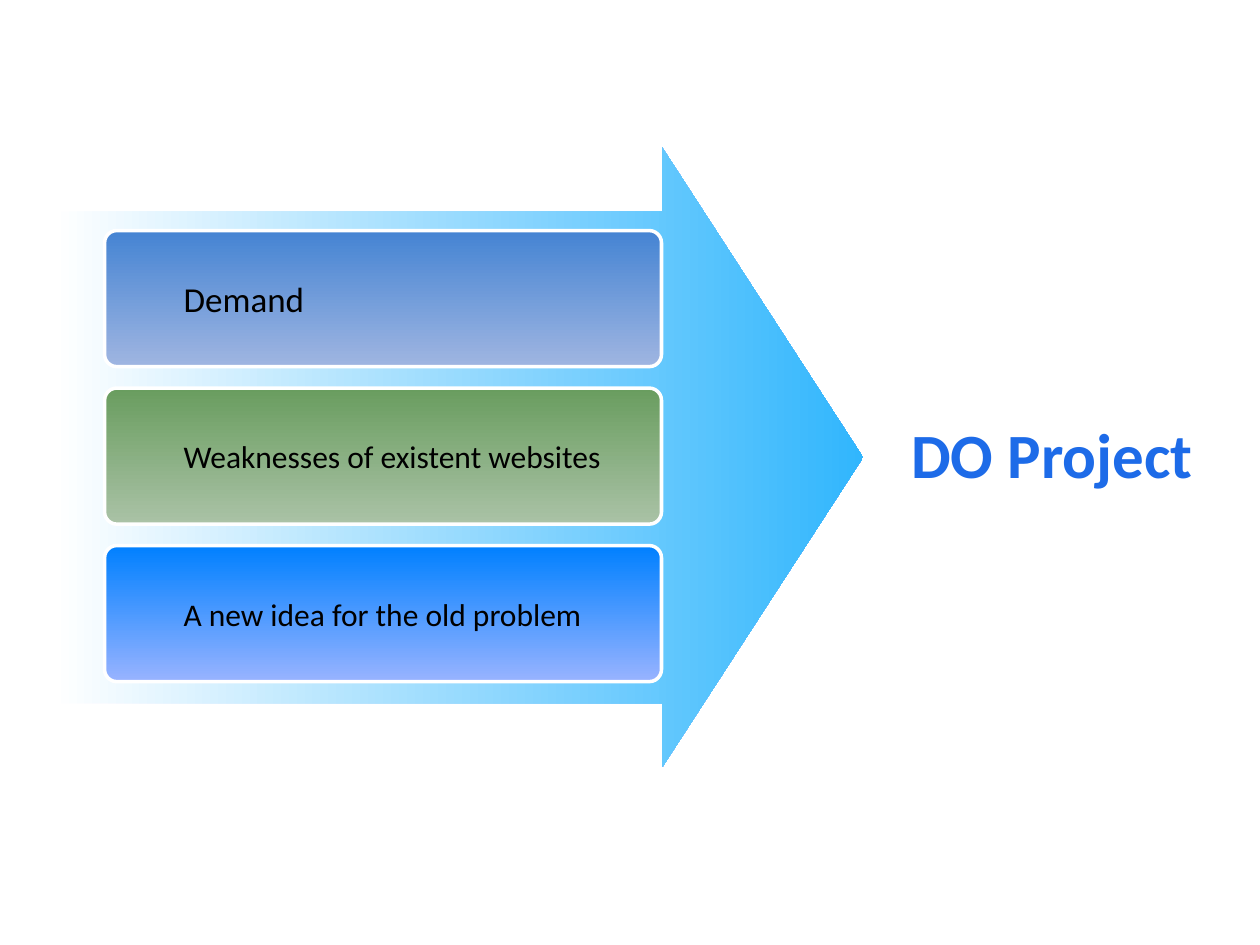
from typing import NamedTuple

from pptx import Presentation
from pptx.dml.color import RGBColor
from pptx.enum.shapes import MSO_SHAPE
from pptx.enum.text import MSO_ANCHOR, PP_ALIGN
from pptx.util import Inches, Pt

ARROW = MSO_SHAPE.RIGHT_ARROW
ROUNDED = MSO_SHAPE.ROUNDED_RECTANGLE
MIDDLE = MSO_ANCHOR.MIDDLE
LEFT, CENTER = PP_ALIGN.LEFT, PP_ALIGN.CENTER

WHITE = RGBColor(0xFF, 0xFF, 0xFF)
BLACK = RGBColor(0x00, 0x00, 0x00)
SKY = RGBColor(0x31, 0xB6, 0xFD)
TITLE_BLUE = RGBColor(0x1D, 0x6B, 0xE8)
BLUE, PALE_BLUE = RGBColor(0x45, 0x84, 0xD3), RGBColor(0x9F, 0xB5, 0xE1)
GREEN, PALE_GREEN = RGBColor(0x69, 0x9D, 0x5F), RGBColor(0xAA, 0xC2, 0xA6)
AZURE, PALE_AZURE = RGBColor(0x00, 0x80, 0xFF), RGBColor(0x98, 0xB3, 0xFF)

RIGHTWARD, DOWNWARD = 0, 270
CARD_LEFT, CARD_TOP, CARD_STEP = 0.83, 1.83, 1.25
CARD_WIDTH, CARD_HEIGHT = 4.42, 1.08


class Card(NamedTuple):
    text: str
    size: int
    top_color: RGBColor
    bottom_color: RGBColor


CARDS = [
    Card("Demand", 20, BLUE, PALE_BLUE),
    Card("Weaknesses of existent websites", 18, GREEN, PALE_GREEN),
    Card("A new idea for the old problem", 18, AZURE, PALE_AZURE),
]


def add_gradient_shape(slide, kind, box: tuple, adjustments: tuple,
                       colors: tuple, angle: int):
    sp = slide.shapes.add_shape(kind, *map(Inches, box))
    sp.shadow.inherit = False
    for i, value in enumerate(adjustments):
        sp.adjustments[i] = value
    sp.fill.gradient()
    sp.fill.gradient_angle = angle
    for stop, color, position in zip(sp.fill.gradient_stops, colors, (0, 1)):
        stop.color.rgb = color
        stop.position = position
    return sp


def write_text(p, text: str, color: RGBColor, **font_format) -> None:
    r = p.add_run()
    r.text = text
    r.font.color.rgb = color
    for name, value in {"name": "Calibri", **font_format}.items():
        setattr(r.font, name, value)


def add_card(slide, card: Card, row: int) -> None:
    box = (CARD_LEFT, CARD_TOP + row * CARD_STEP, CARD_WIDTH, CARD_HEIGHT)
    sp = add_gradient_shape(slide, ROUNDED, box, (0.09,),
                            (card.top_color, card.bottom_color), DOWNWARD)
    sp.line.color.rgb = WHITE
    sp.line.width = Pt(2)
    tf = sp.text_frame
    tf.word_wrap = True
    tf.vertical_anchor = MIDDLE
    p = tf.paragraphs[0]
    p.alignment = LEFT
    p.level = 1
    pPr = p._p.get_or_add_pPr()
    pPr.set("marL", str(Inches(0.5)))
    pPr.set("indent", "0")
    write_text(p, card.text, BLACK, size=Pt(card.size))


def add_result(slide) -> None:
    box = (7.08, 3.25, 2.54, 0.71)
    tf = slide.shapes.add_textbox(*map(Inches, box)).text_frame
    tf.word_wrap = False
    p = tf.paragraphs[0]
    p.alignment = CENTER
    write_text(p, "DO Project", TITLE_BLUE, size=Pt(36), bold=True)


def main() -> None:
    prs = Presentation()
    prs.slide_width, prs.slide_height = Inches(10), Inches(7.5)
    slide = prs.slides.add_slide(prs.slide_layouts[6])
    arrow = add_gradient_shape(slide, ARROW, (0.42, 1.17, 6.43, 4.92),
                               (0.793, 0.324), (WHITE, SKY), RIGHTWARD)
    arrow.line.fill.background()
    for row, card in enumerate(CARDS):
        add_card(slide, card, row)
    add_result(slide)
    prs.save("out.pptx")


if __name__ == "__main__":
    main()
